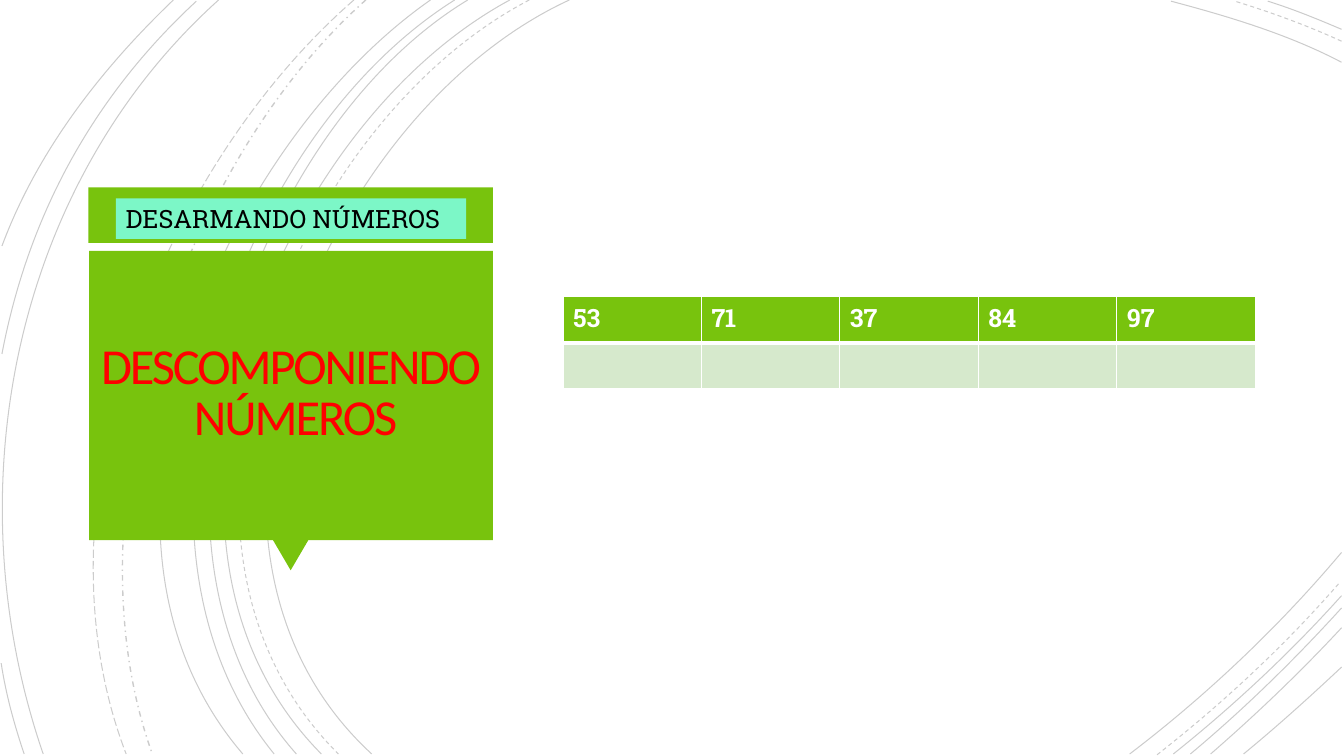
from lxml import etree
from pptx import Presentation
from pptx.dml.color import RGBColor
from pptx.enum.dml import MSO_LINE
from pptx.enum.shapes import MSO_SHAPE
from pptx.enum.text import MSO_ANCHOR, PP_ALIGN
from pptx.oxml.ns import qn
from pptx.util import Cm, Pt

SOLID, DASH = MSO_LINE.SOLID, MSO_LINE.DASH
DASH_DOT, LONG_DASH = MSO_LINE.DASH_DOT, MSO_LINE.LONG_DASH
RECTANGLE, TRIANGLE = MSO_SHAPE.RECTANGLE, MSO_SHAPE.ISOSCELES_TRIANGLE

GREEN, PALE_GREEN, AQUA = "78C30D", "D6E9CC", "7CF7C7"
BLACK, WHITE, RED = "000000", "FFFFFF", "FF0000"
SLAB, SANS = "Roboto Slab", "Calibri"

LABEL = "DESARMANDO NÚMEROS"
TITLE_LINES = ["DESCOMPONIENDO", " NÚMEROS"]
NUMBERS = ["53", "71", "37", "84", "97"]

# Bézier arcs in cm: start, two control points, end
ARCS = [
    (SOLID, (14.35, 0), (8, 2.92), (3.63, 13.72), (9.37, 19)),
    (SOLID, (33.81, 1.57), (32.46, 0.86), (30.94, 0.41), (29.51, 0.03)),
    (SOLID, (28.47, 19), (30.4, 17.53), (32.23, 15.8), (33.81, 13.92)),
    (DASH, (13.34, 0), (7.24, 3.18), (3.12, 13.64), (8.53, 19)),
    (DASH, (33.81, 1.04), (32.94, 0.64), (32, 0.3), (31.12, 0.03)),
    (DASH, (29.16, 19.02), (30.81, 17.73), (32.39, 16.26), (33.78, 14.66)),
    (SOLID, (12.85, 0), (6.86, 3.23), (2.79, 13.64), (8.1, 19)),
    (SOLID, (33.81, 0.74), (33.2, 0.48), (32.59, 0.23), (31.95, 0.03)),
    (SOLID, (29.57, 19), (31.06, 17.81), (32.51, 16.46), (33.81, 15.01)),
    (SOLID, (11.79, 0), (6.2, 3.38), (2.79, 13.74), (7.47, 19)),
    (SOLID, (30, 19), (31.34, 17.88), (32.61, 16.64), (33.81, 15.32)),
    (SOLID, (11.46, 0), (5.87, 3.51), (2.46, 13.54), (6.91, 19)),
    (SOLID, (30.51, 19), (31.65, 18.01), (32.77, 16.94), (33.81, 15.82)),
    (SOLID, (10.85, 0), (5.51, 3.73), (1.35, 13.44), (6.12, 19)),
    (SOLID, (31.34, 19), (32.18, 18.31), (32.99, 17.58), (33.81, 16.81)),
    (DASH_DOT, (9.22, 0), (4.47, 4.22), (1.65, 12.93), (3.84, 19)),
    (LONG_DASH, (8.92, 0), (3.99, 4.29), (0.74, 12.67), (3.18, 19)),
    (SOLID, (5.51, 0), (0.28, 4.7), (-1.17, 12.45), (1.09, 19)),
    (SOLID, (4.95, 0.03), (2.34, 2.44), (0.71, 5.44), (0.05, 8.92)),
    (SOLID, (0.03, 16.71), (0.15, 17.5), (0.36, 18.26), (0.61, 19)),
    (SOLID, (4.37, 0), (2.54, 1.75), (0.94, 3.81), (0.05, 6.2)),
]

# left, top, width, height in cm
HEADER_BAR = (2.23, 4.72, 10.19, 1.4)
POINTER = (6.88, 13.61, 0.89, 0.76)
TITLE_PANEL = (2.25, 6.32, 10.17, 7.29)
TITLE_BOX = (1.9, 6.53, 10.87, 6.83)
LABEL_BOX = (2.92, 5, 8.83, 1.02)
TABLE_BOX = (14.19, 7.47, 17.44, 2.33)


def color(hex_text):
    return RGBColor.from_string(hex_text)


def add_arc(slide, dash, *points):
    """Draw one cubic Bézier curve through its four defining points."""
    start, *others = [(Cm(x), Cm(y)) for x, y in points]
    builder = slide.shapes.build_freeform(*start)
    builder.add_line_segments(others, close=False)
    shape = builder.convert_to_shape()

    segments = list(shape.element.iter(qn("a:lnTo")))
    outline = segments[0].getparent()
    curve = etree.SubElement(outline, qn("a:cubicBezTo"))
    for segment in segments:
        curve.append(segment[0])
        outline.remove(segment)

    shape.shadow.inherit = False
    shape.fill.background()
    shape.line.color.rgb = color(BLACK)
    shape.line.width = Pt(1 if dash == DASH_DOT else 0.75)
    shape.line.dash_style = dash
    line_color = shape.element.spPr.find(".//" + qn("a:srgbClr"))
    etree.SubElement(line_color, qn("a:alpha"), val="20000")


def add_block(slide, kind, box, fill):
    shape = slide.shapes.add_shape(kind, *map(Cm, box))
    shape.shadow.inherit = False
    shape.fill.solid()
    shape.fill.fore_color.rgb = color(fill)
    shape.line.fill.background()
    return shape


def add_run(paragraph, text, font, size, hex_text, bold=False):
    run = paragraph.add_run()
    run.text = text
    run.font.name = font
    run.font.size = Pt(size)
    run.font.color.rgb = color(hex_text)
    run.font.bold = bold
    return run


def add_title(slide):
    frame = slide.shapes.add_textbox(*map(Cm, TITLE_BOX)).text_frame
    frame.word_wrap = True
    frame.vertical_anchor = MSO_ANCHOR.MIDDLE
    frame.margin_left = frame.margin_right = Cm(0.63)
    frame.margin_top = frame.margin_bottom = Cm(0.63)
    paragraph = frame.paragraphs[0]
    paragraph.alignment = PP_ALIGN.CENTER
    paragraph.line_spacing = 0.85
    for index, text in enumerate(TITLE_LINES):
        if index:
            paragraph.add_line_break()
        run = add_run(paragraph, text, SANS, 36, RED)
        run.font._element.set("spc", "-150")


def style_cell(cell, fill, top_width, bottom_width):
    """Give a cell white borders and a plain fill."""
    properties = cell._tc.get_or_add_tcPr()
    for side, width in (("L", 1), ("R", 1), ("T", top_width), ("B", bottom_width)):
        border = etree.SubElement(properties, qn("a:ln" + side), w=str(Pt(width)))
        solid = etree.SubElement(border, qn("a:solidFill"))
        etree.SubElement(solid, qn("a:srgbClr"), val=WHITE)
    cell.fill.solid()
    cell.fill.fore_color.rgb = color(fill)


def add_number_table(slide):
    table = slide.shapes.add_table(2, len(NUMBERS), *map(Cm, TABLE_BOX)).table
    table.horz_banding = False
    for column, number in enumerate(NUMBERS):
        header, answer = table.cell(0, column), table.cell(1, column)
        style_cell(header, GREEN, 1, 3)
        style_cell(answer, PALE_GREEN, 3, 1)
        add_run(header.text_frame.paragraphs[0], number, SLAB, 18, WHITE, bold=True)


def main():
    presentation = Presentation()
    presentation.slide_width, presentation.slide_height = Cm(33.87), Cm(19.05)
    slide = presentation.slides.add_slide(presentation.slide_layouts[6])
    for arc in ARCS:
        add_arc(slide, *arc)
    add_block(slide, RECTANGLE, HEADER_BAR, GREEN)
    add_block(slide, TRIANGLE, POINTER, GREEN).rotation = 180
    add_block(slide, RECTANGLE, TITLE_PANEL, GREEN)
    add_title(slide)
    add_number_table(slide)
    label = add_block(slide, RECTANGLE, LABEL_BOX, AQUA).text_frame
    label.word_wrap = True
    label.vertical_anchor = MSO_ANCHOR.TOP
    label.paragraphs[0].alignment = PP_ALIGN.LEFT
    add_run(label.paragraphs[0], LABEL, SLAB, 18, BLACK)
    presentation.save("out.pptx")


if __name__ == "__main__":
    main()
